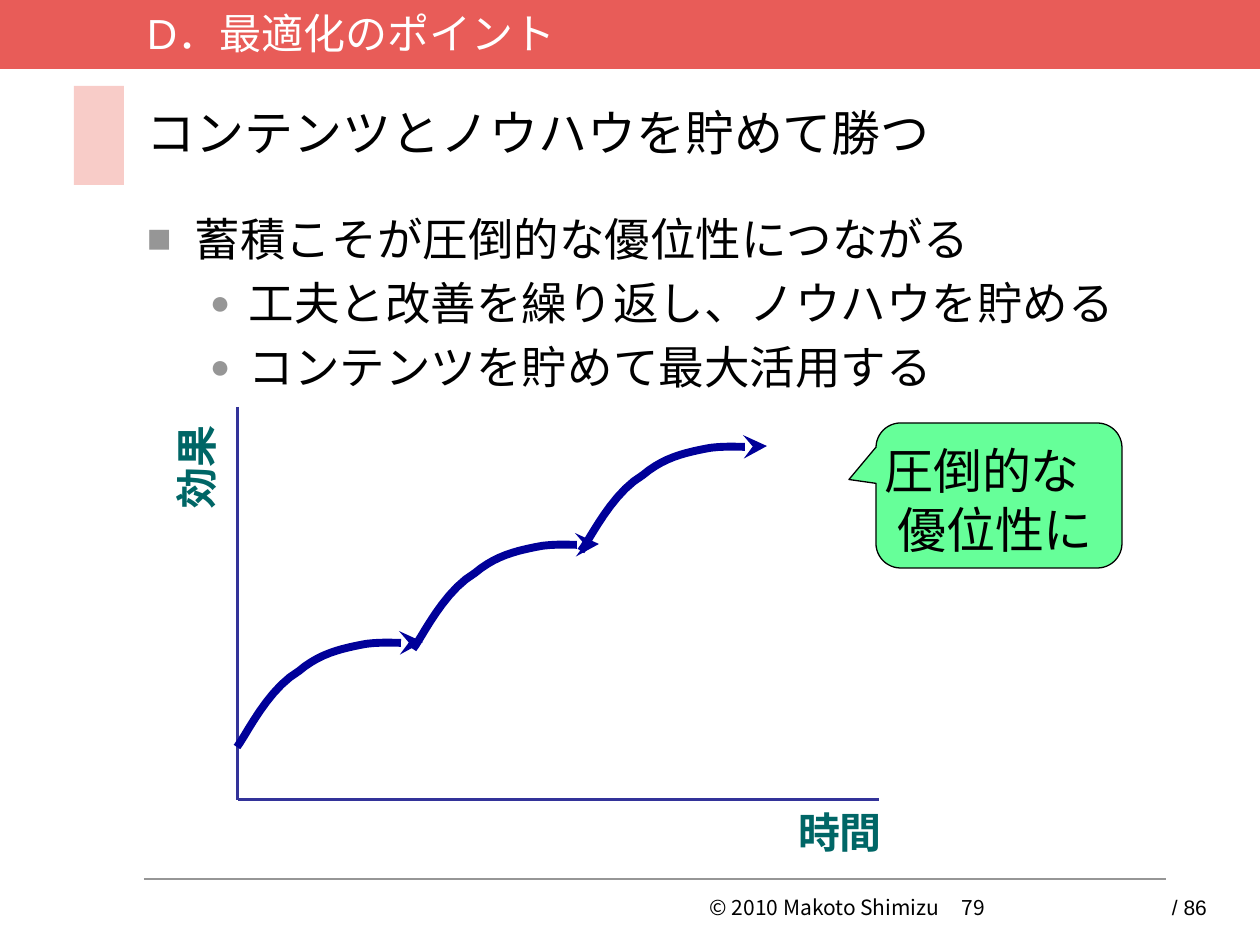
from lxml.etree import SubElement
from pptx import Presentation
from pptx.dml.color import RGBColor
from pptx.enum.shapes import MSO_CONNECTOR as Conn, MSO_SHAPE as Kind
from pptx.enum.text import MSO_ANCHOR as Anchor, PP_ALIGN as Align
from pptx.oxml.ns import qn
from pptx.util import Emu, Pt

SCALE = 914400 / 126
NOTO = "Noto Sans CJK JP"
BLACK, GREY, TEAL = "000000", "969696", "006666"
AXIS, NAVY = "333399", "000099"
PAD = (13, 6, 13, 6)
CURVE = [(0, 0), (10, -13), (30, -57), (62, -76), (82, -93), (103, -98),
         (123, -102), (145, -107), (176, -102), (186, -105)]


def px(n):
    """Turn px into EMU."""
    return Emu(round(n * SCALE))


def color(code):
    """Turn a hex string into a colour."""
    return RGBColor.from_string(code)


def apply(item, style):
    """Set each attribute named in a dict."""
    for key, value in style.items():
        setattr(item, key, value)


def paint(shape, fill=None, line=None, width=0.75):
    """Set fill and line, and drop the shadow."""
    shape.shadow.inherit = False
    if fill:
        shape.fill.solid()
        shape.fill.fore_color.rgb = color(fill)
    else:
        shape.fill.background()
    if line:
        shape.line.color.rgb = color(line)
        shape.line.width = Pt(width)
    else:
        shape.line.fill.background()


def block(slide, kind, box, **look):
    """Add a painted preset shape."""
    shape = slide.shapes.add_shape(kind, *map(px, box))
    paint(shape, **look)
    return shape


def rule(slide, start, end, code, width):
    """Add a straight line."""
    line = slide.shapes.add_connector(Conn.STRAIGHT, *map(px, start + end))
    line.line.color.rgb = color(code)
    line.line.width = Pt(width)
    SubElement(line._element.spPr, qn("a:effectLst"))


def frame(shape, pad=PAD, anchor=Anchor.TOP):
    """Set up the text frame of a shape."""
    text = shape.text_frame
    sides = ("margin_left", "margin_top", "margin_right", "margin_bottom")
    apply(text, dict(zip(sides, map(px, pad))))
    apply(text, {"word_wrap": True, "vertical_anchor": anchor})
    return text


def write(para, words, size, code=BLACK, face="Arial", bold=False, **style):
    """Fill a paragraph and style its runs."""
    para.text = words
    apply(para, {"alignment": Align.LEFT, **style})
    for run in para.runs:
        apply(run.font, {"size": Pt(size), "bold": bold, "name": face})
        run.font.color.rgb = color(code)
        SubElement(run._r.get_or_add_rPr(), qn("a:ea"), typeface=NOTO)


def label(slide, box, words, size, pad=PAD, anchor=Anchor.TOP, **style):
    """Add a text box with one paragraph."""
    shape = slide.shapes.add_textbox(*map(px, box))
    write(frame(shape, pad, anchor).paragraphs[0], words, size, **style)
    return shape


def indent(para, left, hang):
    """Set the left margin and the hanging indent."""
    props = para._p.get_or_add_pPr()
    props.set("marL", str(px(left)))
    props.set("indent", str(-px(hang)))
    return props


def bullet(para, mark, ratio, left, hang):
    """Give a paragraph a grey bullet."""
    props = indent(para, left, hang)
    tint = SubElement(props, qn("a:buClr"))
    SubElement(tint, qn("a:srgbClr"), val=GREY)
    SubElement(props, qn("a:buSzPct"), val=str(ratio * 1000))
    SubElement(props, qn("a:buFont"), typeface="Arial")
    SubElement(props, qn("a:buChar"), char=mark)


def header(slide, box):
    """Add the top band and the slide title."""
    x, y, w, h = box
    block(slide, Kind.RECTANGLE, (x, y, w, 69), fill="E85C58")
    block(slide, Kind.RECTANGLE, (x + 74, y + 86, 50, 99), fill="F8CCC8")
    label(slide, (x + 134, y + 5, 1036, 55), "D．最適化のポイント", 24,
          anchor=Anchor.MIDDLE, code="FFFFFF")
    label(slide, (x + 134, y + 76, 1036, 112), "コンテンツとノウハウを貯めて勝つ",
          28, anchor=Anchor.MIDDLE)


def points(slide, box):
    """Add the bulleted list."""
    text = frame(slide.shapes.add_textbox(*map(px, box)))
    rows = [("蓄積こそが圧倒的な優位性につながる", 0),
            ("工夫と改善を繰り返し、ノウハウを貯める", 1),
            ("コンテンツを貯めて最大活用する", 1)]
    marks = [("■", 90, 48, 48), ("●", 75, 102, 39)]
    for i, (words, level) in enumerate(rows):
        para = text.add_paragraph() if i else text.paragraphs[0]
        write(para, words, 26, face=NOTO, level=level, line_spacing=Pt(34),
              space_before=Pt(2.6 if i else 0))
        bullet(para, *marks[level])


def trace(knots, steps=10):
    """List points along joined cubic curves."""
    spots = [knots[0]]
    for i in range(0, len(knots) - 1, 3):
        for n in range(1, steps + 1):
            t = n / steps
            parts = ((1 - t) ** 3, 3 * t * (1 - t) ** 2,
                     3 * t * t * (1 - t), t ** 3)
            spots.append(tuple(sum(a * k[j] for a, k in
                                   zip(parts, knots[i:i + 4]))
                               for j in (0, 1)))
    return spots


def climb(slide, x, y):
    """Add one rising curve with an arrowhead."""
    spots = [(px(x + a), px(y + b)) for a, b in trace(CURVE)]
    pen = slide.shapes.build_freeform(*spots[0])
    pen.add_line_segments(spots[1:], close=False)
    shape = pen.convert_to_shape()
    paint(shape, line=NAVY, width=4.5)
    SubElement(shape.line._get_or_add_ln(), qn("a:tailEnd"), type="stealth")


def graph(slide, box):
    """Add the axes, their labels and the curves."""
    x, y, w, h = box
    rule(slide, (x, y), (x, y + h), AXIS, 1.75)
    rule(slide, (x, y + h), (x + w, y + h), AXIS, 1.75)
    style = {"pad": (0, 0, 0, 0), "code": TEAL, "bold": True,
             "alignment": Align.RIGHT, "line_spacing": Pt(30.5)}
    label(slide, (x + 213, y + h + 4, 431, 62), "時間", 24, **style)
    side = label(slide, (x - 228, y + 176, 358, 43), "効果", 24, **style)
    side.rotation = 270
    for left, top in ((-1, 340), (175, 242), (343, 144)):
        climb(slide, x + left, y + top)


def callout(slide, box):
    """Add the speech bubble."""
    shape = block(slide, Kind.ROUNDED_RECTANGULAR_CALLOUT, box,
                  fill="66FF99", line=BLACK)
    for i, value in enumerate((-0.61, -0.11, 0.17)):
        shape.adjustments[i] = value
    para = frame(shape, (1, 10, 2, 2)).paragraphs[0]
    write(para, "圧倒的な\v優位性に", 28, face=NOTO, line_spacing=Pt(33.7))
    indent(para, 13, 13)


def footer(slide, box):
    """Add the bottom line, the credit and the page count."""
    x, y, w, h = box
    rule(slide, (x, y), (x + w, y), GREY, 0.75)
    label(slide, (x + 376, y + 10, 655, 35), "© 2010 Makoto Shimizu\t79", 12,
          face=NOTO, alignment=Align.CENTER)
    label(slide, (x + 1015, y + 10, 100, 38), "/ 86", 12)


def main():
    """Build and save the slide."""
    deck = Presentation()
    apply(deck, {"slide_width": px(1260), "slide_height": px(945)})
    slide = deck.slides.add_slide(deck.slide_layouts[6])
    header(slide, (0, 0, 1260, 188))
    points(slide, (134, 200, 1036, 605))
    graph(slide, (238, 407, 641, 393))
    callout(slide, (876, 423, 246, 145))
    footer(slide, (144, 879, 1022, 48))
    deck.save("out.pptx")


if __name__ == "__main__":
    main()
